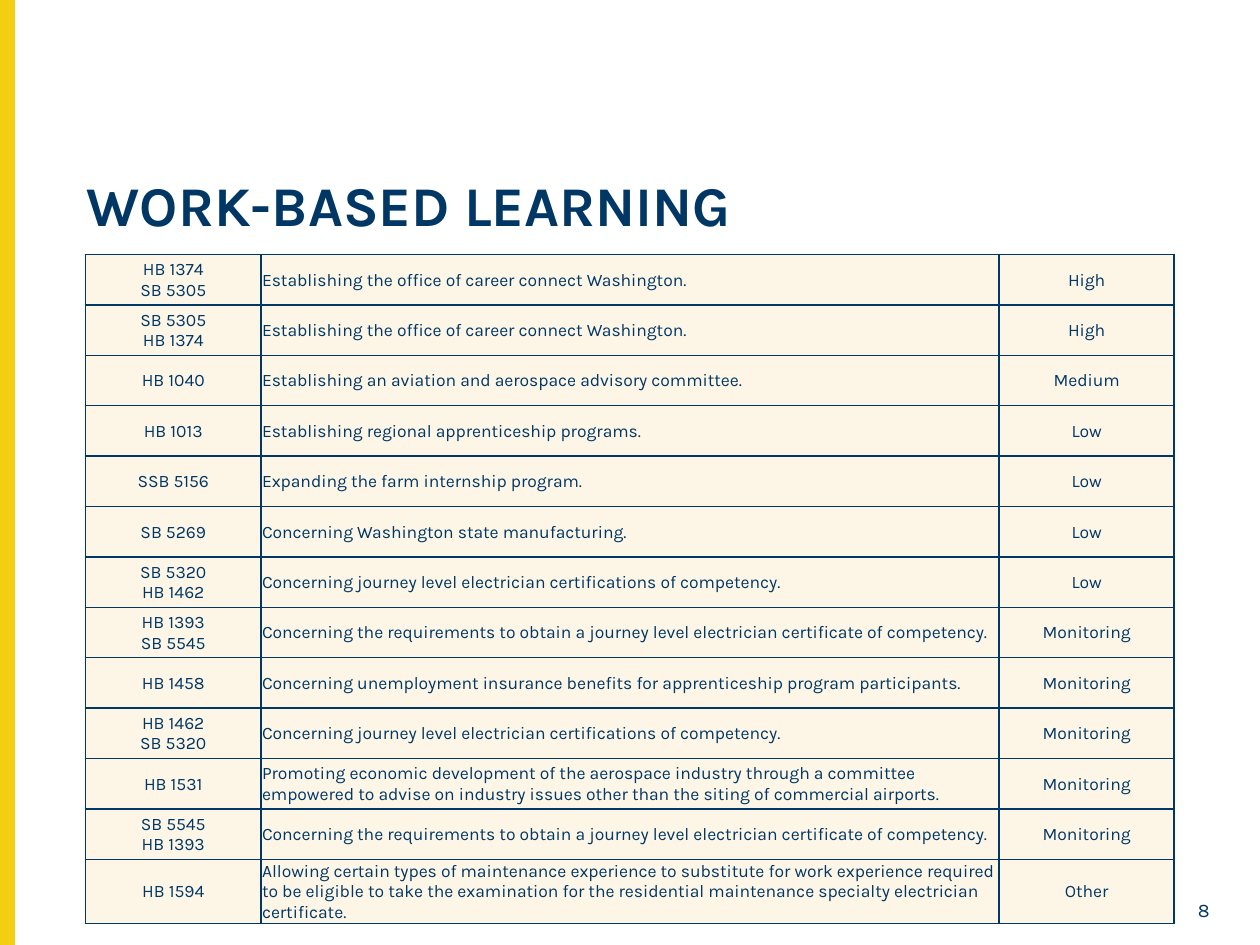
import pptx
import pptx.util
import pptx.dml.color
import pptx.enum.shapes
import pptx.enum.text
import pptx.oxml
import pptx.oxml.ns

Inches = pptx.util.Inches
Pt = pptx.util.Pt
RGBColor = pptx.dml.color.RGBColor
Align = pptx.enum.text.PP_ALIGN
Anchor = pptx.enum.text.MSO_ANCHOR

NAVY = RGBColor(0x00, 0x37, 0x64)
GOLD = RGBColor(0xF4, 0xCE, 0x12)
CREAM = RGBColor(0xFD, 0xF6, 0xE7)
FONT = "Karla"

CAREER = "Establishing the office of career connect Washington."
LEVEL = "Concerning journey level electrician certifications of competency."
OBTAIN = ("Concerning the requirements to obtain a journey level electrician "
          "certificate of competency.")
BILLS = [
    (["HB 1374", "SB 5305"], CAREER, "High"),
    (["SB 5305", "HB 1374"], CAREER, "High"),
    (["HB 1040"], "Establishing an aviation and aerospace advisory committee.", "Medium"),
    (["HB 1013"], "Establishing regional apprenticeship programs.", "Low"),
    (["SSB 5156"], "Expanding the farm internship program.", "Low"),
    (["SB 5269"], "Concerning Washington state manufacturing.", "Low"),
    (["SB 5320", "HB 1462"], LEVEL, "Low"),
    (["HB 1393", "SB 5545"], OBTAIN, "Monitoring"),
    (["HB 1458"], "Concerning unemployment insurance benefits for apprenticeship "
                  "program participants.", "Monitoring"),
    (["HB 1462", "SB 5320"], LEVEL, "Monitoring"),
    (["HB 1531"], "Promoting economic development of the aerospace industry through "
                  "a committee empowered to advise on industry issues other than the "
                  "siting of commercial airports.", "Monitoring"),
    (["SB 5545", "HB 1393"], OBTAIN, "Monitoring"),
    (["HB 1594"], "Allowing certain types of maintenance experience to substitute for "
                  "work experience required to be eligible to take the examination for "
                  "the residential maintenance specialty electrician certificate.", "Other"),
]


def write(frame, lines, size, align, bold=False):
    for i, line in enumerate(lines):
        para = frame.paragraphs[0] if i == 0 else frame.add_paragraph()
        para.alignment = align
        run = para.add_run()
        run.text = line
        run.font.name = FONT
        run.font.size = Pt(size)
        run.font.bold = bold
        run.font.color.rgb = NAVY


def add_bar(slide, box):
    bar = slide.shapes.add_shape(pptx.enum.shapes.MSO_SHAPE.RECTANGLE, *box)
    bar.shadow.inherit = False
    bar.fill.solid()
    bar.fill.fore_color.rgb = GOLD
    bar.line.color.rgb = GOLD
    bar.line.width = Pt(1)


def add_title(slide, box, text):
    title = slide.shapes.title
    title.left, title.top, title.width, title.height = box
    frame = title.text_frame
    frame.vertical_anchor = Anchor.TOP
    frame.auto_size = pptx.enum.text.MSO_AUTO_SIZE.NONE
    write(frame, [text], 32, Align.LEFT, True)
    frame.paragraphs[0].line_spacing = 0.9


def add_number(slide, box, text):
    frame = slide.shapes.add_textbox(*box).text_frame
    frame.word_wrap = True
    frame.vertical_anchor = Anchor.MIDDLE
    write(frame, [text], 11, Align.RIGHT)


def add_edges(cell):
    props = cell._tc.get_or_add_tcPr()
    for i, side in enumerate(("lnL", "lnR", "lnT", "lnB")):
        edge = pptx.oxml.parse_xml(
            f'<a:{side} {pptx.oxml.ns.nsdecls("a")} w="{Pt(1)}">'
            f'<a:solidFill><a:srgbClr val="{NAVY}"/></a:solidFill></a:{side}>')
        props.insert(i, edge)


def fill_cell(cell, lines, align):
    cell.fill.solid()
    cell.fill.fore_color.rgb = CREAM
    cell.vertical_anchor = Anchor.MIDDLE
    cell.margin_left = cell.margin_right = cell.margin_top = Inches(0.01)
    cell.margin_bottom = 0
    write(cell.text_frame, lines, 10, align)
    add_edges(cell)


def add_bills(slide, box):
    left, top, width, height = box
    side = Inches(1.39)
    widths = [side, width - 2 * side, side]
    table = slide.shapes.add_table(len(BILLS), len(widths), *box).table
    table.first_row = table.horz_banding = False
    for col, size in zip(table.columns, widths):
        col.width = size
    for row, (codes, about, rank) in zip(table.rows, BILLS):
        row.height = height // len(BILLS)
        code, text, level = row.cells
        fill_cell(code, codes, Align.CENTER)
        fill_cell(text, [about], Align.LEFT)
        fill_cell(level, [rank], Align.CENTER)


def inch_box(*sides):
    return [Inches(side) for side in sides]


def main():
    deck = pptx.Presentation()
    deck.slide_width, deck.slide_height = Inches(10), Inches(7.5)
    slide = deck.slides.add_slide(deck.slide_layouts.get_by_name("Title Only"))
    add_bar(slide, inch_box(0, 0, 0.11, 7.5))
    add_title(slide, inch_box(0.59, 1.36, 9.12, 0.74), "WORK-BASED LEARNING")
    add_number(slide, inch_box(9.19, 7.09, 0.51, 0.26), "8")
    add_bills(slide, inch_box(0.68, 2.02, 8.64, 5.2))
    deck.save("out.pptx")


if __name__ == "__main__":
    main()
